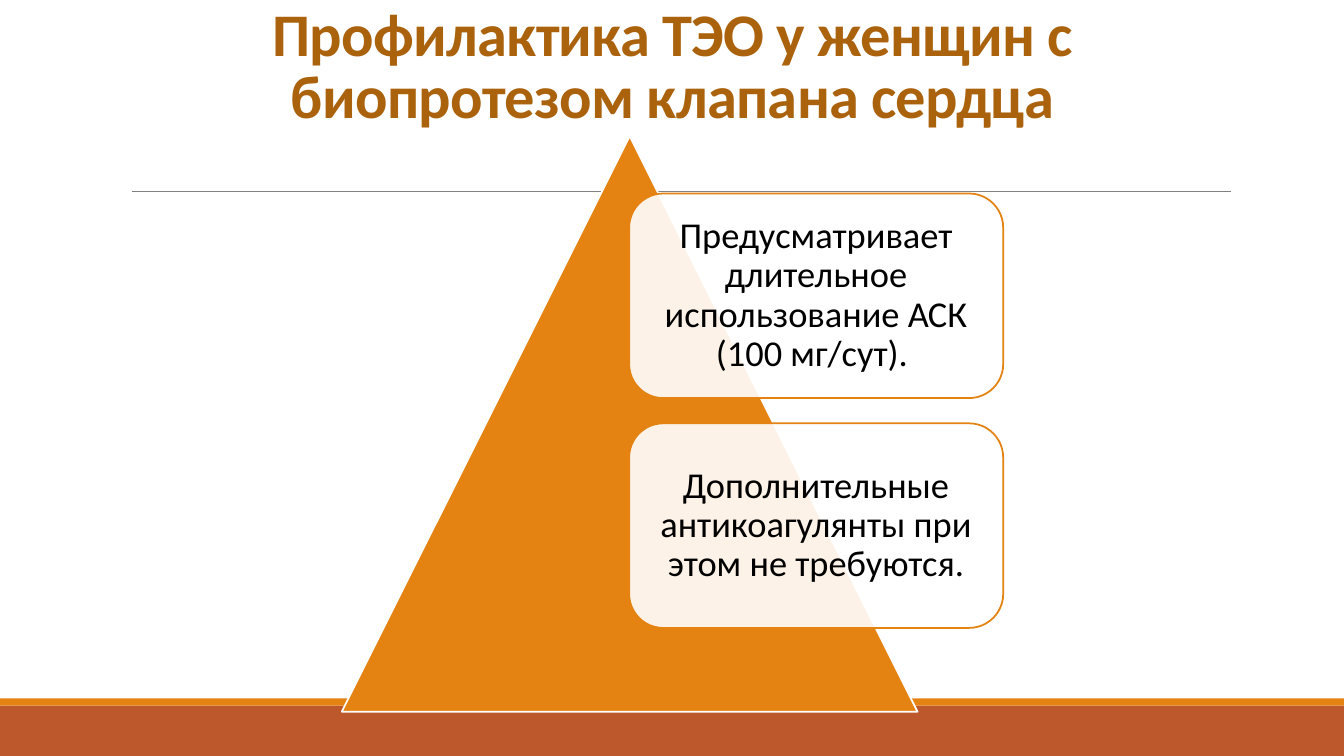
from lxml.etree import SubElement
from pptx import Presentation
from pptx.dml.color import RGBColor
from pptx.enum.shapes import MSO_CONNECTOR, MSO_SHAPE
from pptx.enum.text import MSO_ANCHOR, MSO_AUTO_SIZE, PP_ALIGN
from pptx.oxml.ns import qn
from pptx.util import Emu, Pt

EMU_PER_PX = 9144  # 100 px to the inch
COLORS = {
    "white": "FFFFFF",
    "black": "000000",
    "orange": "E48312",
    "rust": "BD582C",
    "brown": "AB620D",
    "gray": "808080",
}
CARD_TEXTS = [
    "Предусматривает длительное использование АСК (100 мг/сут). ",
    "Дополнительные антикоагулянты при этом не требуются.",
]


def px(length):
    return Emu(length * EMU_PER_PX)


class SlideBuilder:
    font = "Calibri"

    def __init__(self, slide):
        self.slide = slide

    def color(self, name):
        return RGBColor.from_string(COLORS[name])

    def set_text(self, text_frame, text, size, color, spacing, bold=False):
        text_frame.word_wrap = True
        text_frame.auto_size = MSO_AUTO_SIZE.NONE
        text_frame.text = text
        paragraph = text_frame.paragraphs[0]
        paragraph.alignment = PP_ALIGN.CENTER
        paragraph.line_spacing = spacing
        run = paragraph.runs[0]
        run.font.name = self.font
        run.font.size = Pt(size)
        run.font.bold = bold
        run.font.color.rgb = self.color(color)
        return run

    def title(self, text, left, top, width, height):
        title = self.slide.shapes.title
        title.left, title.top = px(left), px(top)
        title.width, title.height = px(width), px(height)
        title.text_frame.vertical_anchor = MSO_ANCHOR.BOTTOM
        run = self.set_text(title.text_frame, text, 43.2, "brown", 0.85, bold=True)
        run._r.get_or_add_rPr().set("spc", "-50")

    def shape(self, kind, left, top, width, height, fill, line=None):
        shape = self.slide.shapes.add_shape(
            kind, px(left), px(top), px(width), px(height))
        shape.shadow.inherit = False
        shape.fill.solid()
        shape.fill.fore_color.rgb = self.color(fill)
        if line:
            shape.line.color.rgb = self.color(line)
            shape.line.width = Pt(1.25)
        else:
            shape.line.fill.background()
        return shape

    def rule(self, left, right, top):
        connector = self.slide.shapes.add_connector(
            MSO_CONNECTOR.STRAIGHT, px(left), px(top), px(right), px(top))
        connector.line.color.rgb = self.color("gray")
        connector.line.width = Pt(0.5)
        SubElement(connector._element.spPr, qn("a:effectLst"))

    def card(self, text, left, top, width, height):
        card = self.shape(MSO_SHAPE.ROUNDED_RECTANGLE, left, top, width, height,
                          "white", "orange")
        # Let the triangle show faintly through the card
        fill_color = card._element.spPr.find(qn("a:solidFill"))[0]
        SubElement(fill_color, qn("a:alpha")).set("val", "90000")
        frame = card.text_frame
        frame.margin_left = frame.margin_right = px(21)
        frame.margin_top = frame.margin_bottom = px(21)
        frame.vertical_anchor = MSO_ANCHOR.MIDDLE
        self.set_text(frame, text, 26, "black", 0.9)


def main():
    presentation = Presentation()
    presentation.slide_width, presentation.slide_height = px(1333), px(750)
    slide = presentation.slides.add_slide(presentation.slide_layouts[5])
    builder = SlideBuilder(slide)

    # Footer bands and rule
    builder.shape(MSO_SHAPE.RECTANGLE, 0, 700, 1333, 50, "rust")
    builder.shape(MSO_SHAPE.RECTANGLE, 0, 693, 1333, 7, "orange")
    builder.rule(131, 1221, 190)

    # Title
    builder.title("Профилактика ТЭО у женщин с биопротезом клапана сердца",
                  92, -10, 1150, 145)

    # Pyramid with its cards
    builder.shape(MSO_SHAPE.ISOSCELES_TRIANGLE, 339, 135, 571, 571,
                  "orange", "white")
    for index, text in enumerate(CARD_TEXTS):
        builder.card(text, 624, 192 + index * 228, 371, 203)

    presentation.save("out.pptx")


if __name__ == "__main__":
    main()
